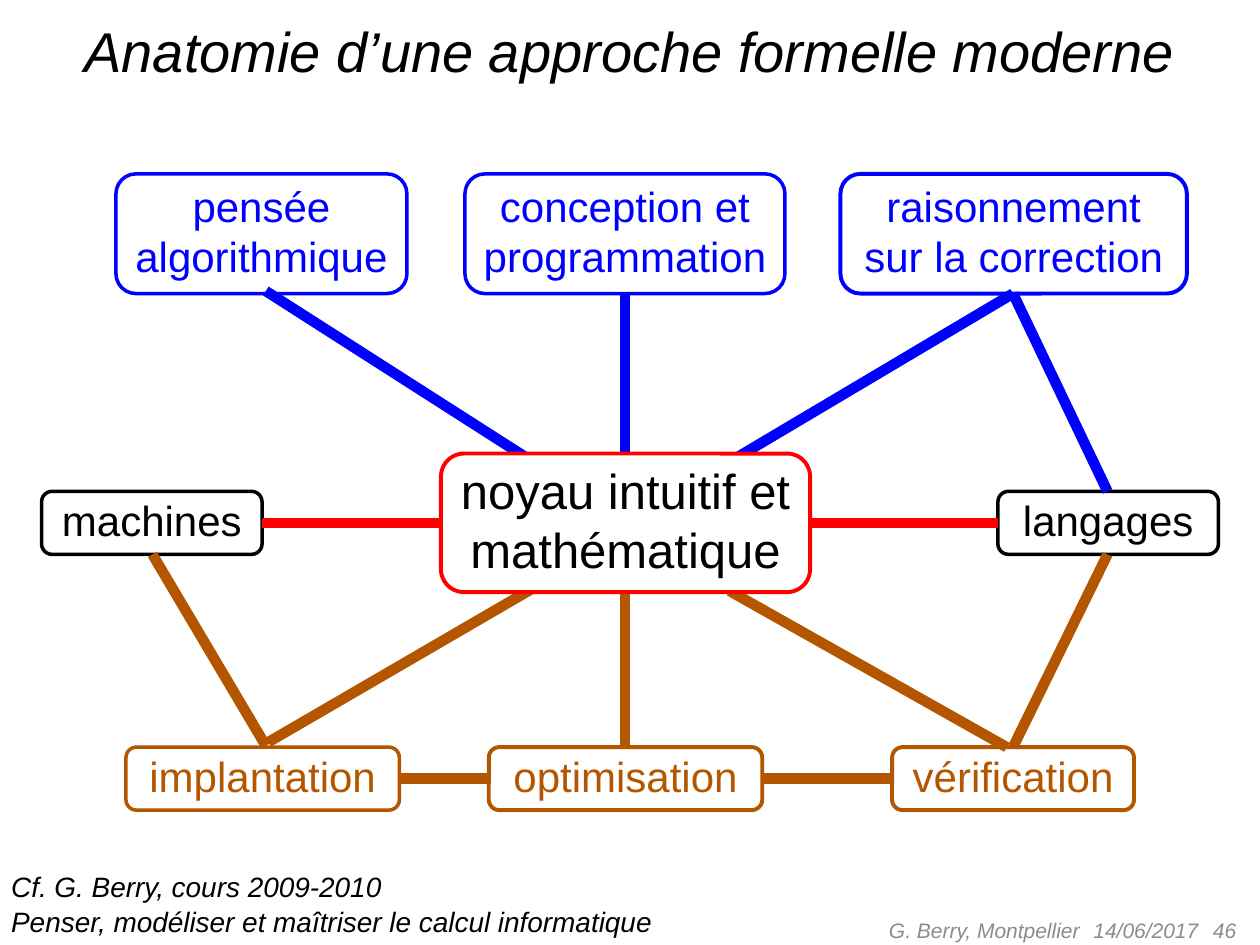
"""Build a concept map of a modern formal approach around its mathematical core."""
from lxml import etree
from pptx import Presentation
from pptx.dml.color import RGBColor
from pptx.enum import shapes, text
from pptx.oxml.ns import qn
from pptx.util import Inches, Pt

BLACK = RGBColor(0x00, 0x00, 0x00)
WHITE = RGBColor(0xFF, 0xFF, 0xFF)
BLUE = RGBColor(0x00, 0x00, 0xFF)
BROWN = RGBColor(0xB4, 0x56, 0x00)
RED = RGBColor(0xFF, 0x00, 0x00)
GREY = RGBColor(0x8C, 0x8C, 0x8C)
FONT = "Arial"
LEFT, CENTER, RIGHT = text.PP_ALIGN.LEFT, text.PP_ALIGN.CENTER, text.PP_ALIGN.RIGHT

TOP_ROW, TOP_HEIGHT = 1.38, 0.95
TOP_END = TOP_ROW + TOP_HEIGHT
SIDE_ROW, BOTTOM_ROW, ROW_HEIGHT = 3.9, 5.93, 0.5
SIDE_END = SIDE_ROW + ROW_HEIGHT
SIDE_MIDDLE, BOTTOM_MIDDLE = SIDE_ROW + ROW_HEIGHT / 2, BOTTOM_ROW + ROW_HEIGHT / 2
CORE_LEFT, CORE_TOP, CORE_WIDTH, CORE_HEIGHT = 3.5, 3.6, 2.93, 1.1
CORE_END = CORE_TOP + CORE_HEIGHT
AXIS = 4.96

TOP_NODES = [
    ("pensée\nalgorithmique", 0.92, 2.31, 2),
    ("conception et\nprogrammation", 3.69, 2.54, 2),
    ("raisonnement\nsur la correction", 6.67, 2.75, 2.25),
]
BOTTOM_NODES = [
    ("implantation", 1, 2.17, 2),
    ("optimisation", 3.88, 2.17, 2.25),
    ("vérification", 7.08, 1.92, 2.25),
]
SIDE_NODES = [("machines", 0.33, 1.75, 2), ("langages", 7.92, 1.75, 2)]

LINKS = [
    (BROWN, (4.28, 4.64), (2.13, 5.89)),
    (BROWN, (5.79, 4.69), (7.99, BOTTOM_ROW)),
    (BROWN, (AXIS, CORE_END), (AXIS, BOTTOM_ROW)),
    (BROWN, (8.79, SIDE_END), (8.04, BOTTOM_ROW)),
    (BROWN, (1.21, SIDE_END), (2.11, 5.92)),
    (BROWN, (6.04, BOTTOM_MIDDLE), (7.08, BOTTOM_MIDDLE)),
    (BROWN, (3.17, BOTTOM_MIDDLE), (3.88, BOTTOM_MIDDLE)),
    (BLUE, (4.19, 3.64), (2.11, 2.31)),
    (BLUE, (AXIS, CORE_TOP), (AXIS, TOP_END)),
    (BLUE, (5.85, 3.63), (8.04, TOP_END)),
    (BLUE, (8.04, TOP_END), (8.79, SIDE_ROW)),
    (RED, (2.08, SIDE_MIDDLE), (CORE_LEFT, SIDE_MIDDLE)),
    (RED, (6.42, SIDE_MIDDLE), (7.92, SIDE_MIDDLE)),
]


def write(shape, words, size, color, align, italic=False, spacing=None):
    """Put words in a shape, one paragraph per line, in one style."""
    frame = shape.text_frame
    frame.text = words
    frame.vertical_anchor = text.MSO_ANCHOR.MIDDLE
    for para in frame.paragraphs:
        para.alignment = align
        if spacing:
            para.line_spacing = spacing
        for span in para.runs:
            span.font.name = FONT
            span.font.size = Pt(size)
            span.font.italic = italic
            span.font.color.rgb = color


def add_node(page, words, left, top, width, height, outline, weight, color, size=24):
    """Add a white rounded box with a coloured outline."""
    node = page.shapes.add_shape(
        shapes.MSO_SHAPE.ROUNDED_RECTANGLE,
        Inches(left), Inches(top), Inches(width), Inches(height))
    node.shadow.inherit = False
    node.fill.solid()
    node.fill.fore_color.rgb = WHITE
    node.line.color.rgb = outline
    node.line.width = Pt(weight)
    frame = node.text_frame
    frame.word_wrap = False
    frame.margin_left = frame.margin_right = Inches(0.1)
    frame.margin_top, frame.margin_bottom = Inches(0), Inches(0.05)
    write(node, words, size, color, CENTER)


def add_row(page, nodes, top, height, color):
    """Add boxes that share a top edge, a height and a colour."""
    for words, left, width, weight in nodes:
        add_node(page, words, left, top, width, height, color, weight, color)


def add_link(page, color, start, end):
    """Add a thick straight line between two points."""
    link = page.shapes.add_connector(
        shapes.MSO_CONNECTOR.STRAIGHT, *map(Inches, start + end))
    link.line.color.rgb = color
    link.line.width = Pt(6)
    etree.SubElement(link._element.spPr, qn("a:effectLst"))


def add_caption(page, words, left, top, width, height, size, color, align, spacing=None):
    """Add a free italic text."""
    box = page.shapes.add_textbox(
        Inches(left), Inches(top), Inches(width), Inches(height))
    box.text_frame.word_wrap = True
    write(box, words, size, color, align, italic=True, spacing=spacing)


def main():
    """Assemble the slide and save it."""
    deck = Presentation()
    deck.slide_width, deck.slide_height = Inches(10), Inches(7.5)
    page = deck.slides.add_slide(deck.slide_layouts[6])

    add_caption(page, "Anatomie d’une approche formelle moderne",
                0.25, 0.08, 9.5, 0.64, 32, BLACK, CENTER)
    add_row(page, TOP_NODES, TOP_ROW, TOP_HEIGHT, BLUE)
    add_row(page, BOTTOM_NODES, BOTTOM_ROW, ROW_HEIGHT, BROWN)
    add_row(page, SIDE_NODES, SIDE_ROW, ROW_HEIGHT, BLACK)
    for color, start, end in LINKS:
        add_link(page, color, start, end)
    add_node(page, "noyau intuitif et\nmathématique", CORE_LEFT, CORE_TOP,
             CORE_WIDTH, CORE_HEIGHT, RED, 2.25, BLACK, 28)

    add_caption(page, "Cf. G. Berry, cours 2009-2010\n"
                "Penser, modéliser et maîtriser le calcul informatique",
                -0.01, 6.84, 5.42, 0.66, 16, BLACK, LEFT, 1.05)
    for words, left, width, align in [
        ("G. Berry, Montpellier", 4.61, 4.06, RIGHT),
        ("14/06/2017", 8.58, 1.1, LEFT),
        ("46", 7.58, 2.33, RIGHT),
    ]:
        add_caption(page, words, left, 7.18, width, 0.4, 12, GREY, align)
    deck.save("out.pptx")


if __name__ == "__main__":
    main()
